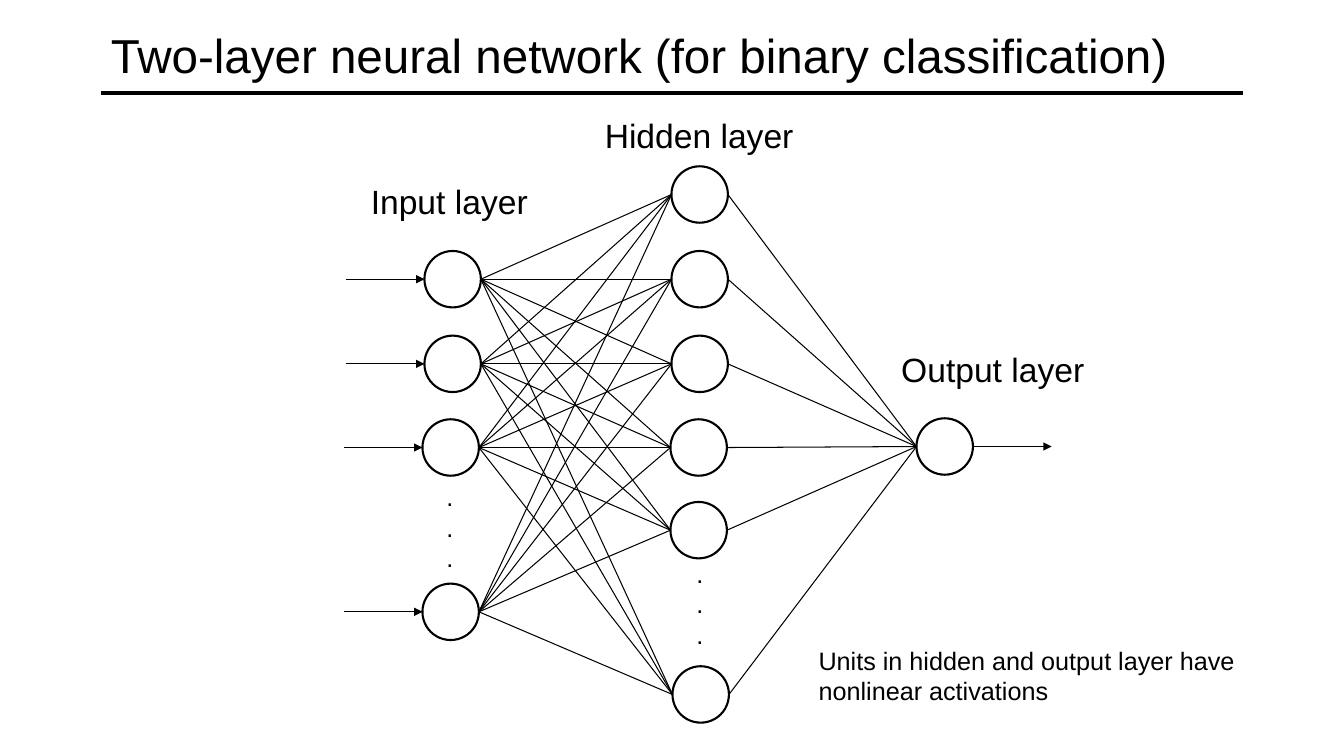
from itertools import product

from lxml.etree import SubElement
from pptx import Presentation
from pptx.dml.color import RGBColor
from pptx.enum.shapes import MSO_CONNECTOR, MSO_SHAPE
from pptx.enum.text import MSO_ANCHOR, MSO_AUTO_SIZE, PP_ALIGN
from pptx.oxml.ns import qn
from pptx.util import Pt

PX = 9144
COLORS = {"ink": "000000", "unit": "FFFFFF"}
FONT = "Arial"
RADIUS = 28
ARROW_LENGTH = 78

INPUT_UNITS = [(449, 277), (449, 361), (447, 444), (447, 607)]
HIDDEN_UNITS = [(694, 193), (694, 277), (694, 361), (693, 444), (693, 526), (695, 689)]
OUTPUT_UNIT = (937, 443)


def color(name):
    return RGBColor.from_string(COLORS[name])


def place(shape, left, top, width, height):
    shape.left, shape.top = left * PX, top * PX
    shape.width, shape.height = width * PX, height * PX


def style_text(frame, text, size):
    frame.text = text
    for paragraph in frame.paragraphs:
        paragraph.alignment = PP_ALIGN.LEFT
        paragraph.font.name = FONT
        paragraph.font.size = Pt(size)
        paragraph.font.color.rgb = color("ink")


def add_title(page, text):
    title = page.shapes.title
    place(title, 100, 8, 1133, 92)
    title.text_frame.auto_size = MSO_AUTO_SIZE.NONE
    title.text_frame.vertical_anchor = MSO_ANCHOR.MIDDLE
    style_text(title.text_frame, text, 34)


def add_text(page, text, left, top, width, height, size, wrap=False):
    box = page.shapes.add_textbox(left * PX, top * PX, width * PX, height * PX)
    box.text_frame.word_wrap = wrap
    box.text_frame.auto_size = MSO_AUTO_SIZE.SHAPE_TO_FIT_TEXT
    style_text(box.text_frame, text, size)


def add_line(page, start, end, weight=0.75, arrow=False):
    ends = [length * PX for length in (*start, *end)]
    line = page.shapes.add_connector(MSO_CONNECTOR.STRAIGHT, *ends)
    line.line.color.rgb = color("ink")
    line.line.width = Pt(weight)
    if arrow:
        SubElement(line.line._get_or_add_ln(), qn("a:tailEnd"), type="triangle")
    SubElement(line._element.spPr, qn("a:effectLst"))


def add_unit(page, center):
    x, y = center
    unit = page.shapes.add_shape(MSO_SHAPE.OVAL, 0, 0, 0, 0)
    place(unit, x - RADIUS, y - RADIUS, 2 * RADIUS, 2 * RADIUS)
    unit.shadow.inherit = False
    unit.fill.solid()
    unit.fill.fore_color.rgb = color("unit")
    unit.line.color.rgb = color("ink")
    unit.line.width = Pt(1.5)


def left_edge(center):
    return center[0] - RADIUS, center[1]


def right_edge(center):
    return center[0] + RADIUS, center[1]


def add_network(page):
    for unit in [*INPUT_UNITS, *HIDDEN_UNITS, OUTPUT_UNIT]:
        add_unit(page, unit)
    links = [*product(INPUT_UNITS, HIDDEN_UNITS), *product(HIDDEN_UNITS, [OUTPUT_UNIT])]
    for source, target in links:
        add_line(page, right_edge(source), left_edge(target))
    for unit in INPUT_UNITS:
        x, y = left_edge(unit)
        add_line(page, (x - ARROW_LENGTH, y), (x, y), arrow=True)
    x, y = right_edge(OUTPUT_UNIT)
    add_line(page, (x, y), (x + ARROW_LENGTH, y), arrow=True)


def main():
    deck = Presentation()
    deck.slide_width, deck.slide_height = 1333 * PX, 750 * PX
    page = deck.slides.add_slide(deck.slide_layouts[5])

    add_title(page, "Two-layer neural network (for binary classification)")
    add_line(page, (100, 92), (1233, 92), weight=3)
    add_network(page)

    for left, top in [(433, 473), (681, 549)]:
        add_text(page, ".\n.\n.", left, top, 27, 101, 18)
    for text, left, top, width in [
        ("Input layer", 358, 175, 177),
        ("Hidden layer", 590, 109, 210),
        ("Output layer", 884, 341, 204),
    ]:
        add_text(page, text, left, top, width, 50, 24)
    note = "Units in hidden and output layer have nonlinear activations"
    add_text(page, note, 802, 635, 523, 71, 18, wrap=True)

    deck.save("out.pptx")


if __name__ == "__main__":
    main()
